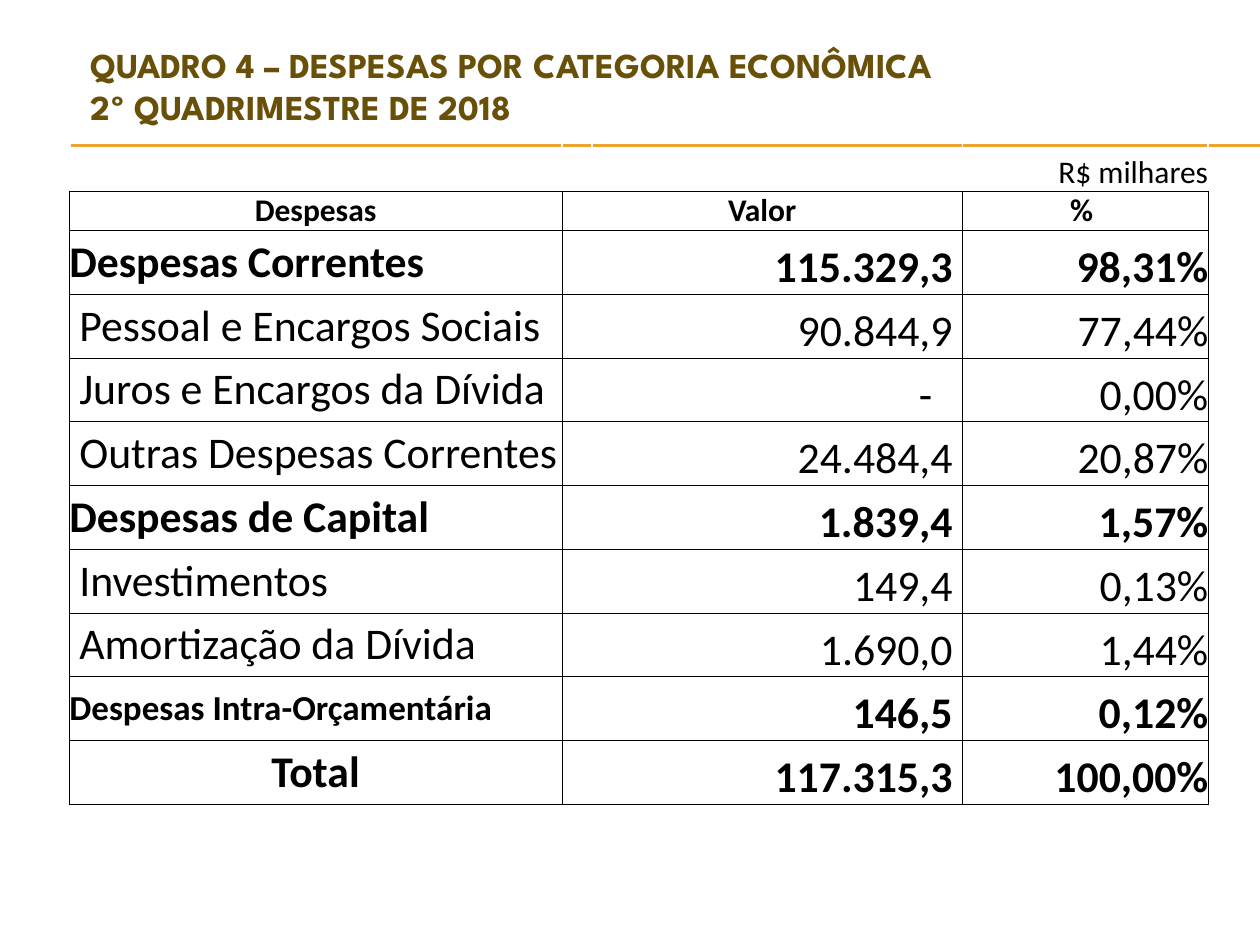
from dataclasses import dataclass

import pptx
import pptx.dml.color
import pptx.enum.shapes
import pptx.enum.text
import pptx.oxml
import pptx.oxml.ns
import pptx.util

Inches = pptx.util.Inches
Pt = pptx.util.Pt
Align = pptx.enum.text.PP_ALIGN
Anchor = pptx.enum.text.MSO_ANCHOR


@dataclass(frozen=True)
class Theme:
    title: str = "695008"
    rule: str = "F0A22E"
    ink: str = "000000"
    head: str = "League Spartan"
    body: str = "Calibri"
    small: int = 18
    mid: int = 20
    large: int = 25


THEME = Theme()


@dataclass(frozen=True)
class Entry:
    name: str
    value: str
    share: str
    bold: bool = False
    size: int = THEME.large
    align: Align = Align.LEFT
    pad: float = 0.08  # space right of the value


@dataclass(frozen=True)
class Style:
    size: int
    bold: bool
    align: Align
    anchor: Anchor = Anchor.MIDDLE
    left: float = 0
    right: float = 0


ENTRIES = [
    Entry("Despesas Correntes", "115.329,3", "98,31%", True),
    Entry("Pessoal e Encargos Sociais", "90.844,9", "77,44%"),
    Entry("Juros e Encargos da Dívida", "-", "0,00%", pad=0.24),
    Entry("Outras Despesas Correntes", "24.484,4", "20,87%"),
    Entry("Despesas de Capital", "1.839,4", "1,57%", True),
    Entry("Investimentos", "149,4", "0,13%"),
    Entry("Amortização da Dívida", "1.690,0", "1,44%"),
    Entry("Despesas Intra-Orçamentária", "146,5", "0,12%", True, THEME.mid),
    Entry("Total", "117.315,3", "100,00%", True, align=Align.CENTER),
]
COLS = [3.91, 0.03, 2.94, 1.95]
ROWS = [0.5, 0.31] + [0.506] * len(ENTRIES)


def paint(font, face: str, size: int, color: str, bold: bool) -> None:
    font.name, font.size, font.bold = face, Pt(size), bold
    font.color.rgb = pptx.dml.color.RGBColor.from_string(color)


def rule(slide, top: float) -> None:
    line = slide.shapes.add_connector(
        pptx.enum.shapes.MSO_CONNECTOR.STRAIGHT,
        Inches(0.56), Inches(top), Inches(10), Inches(top))
    line.line.color.rgb = pptx.dml.color.RGBColor.from_string(THEME.rule)
    line.line.width = Pt(0.75)
    props = line._element.spPr
    props.append(props.makeelement(pptx.oxml.ns.qn("a:effectLst"), {}))


def title(slide, lines: list[str]) -> None:
    box = slide.shapes.add_textbox(
        Inches(0.62), Inches(0.39), Inches(8.5), Inches(0.58))
    frame = box.text_frame
    frame.word_wrap = True
    frame.vertical_anchor = Anchor.MIDDLE
    para = frame.paragraphs[0]
    for i, line in enumerate(lines):
        if i:
            para.add_line_break()
        run = para.add_run()
        run.text = line
        paint(run.font, THEME.head, THEME.mid, THEME.title, True)


def border(cell, sides: str) -> None:
    props = cell._tc.get_or_add_tcPr()
    for i, side in enumerate(sides):
        props.insert(i, pptx.oxml.parse_xml(
            f'<a:ln{side} {pptx.oxml.ns.nsdecls("a")} w="{Pt(0.5)}">'
            f'<a:solidFill><a:srgbClr val="{THEME.ink}"/></a:solidFill>'
            f'</a:ln{side}>'))


def write(cell, text: str, style: Style) -> None:
    cell.margin_left, cell.margin_right = Inches(style.left), Inches(style.right)
    cell.margin_top = cell.margin_bottom = 0
    cell.vertical_anchor = style.anchor
    para = cell.text_frame.paragraphs[0]
    para.alignment = style.align
    run = para.add_run()
    run.text = text
    paint(run.font, THEME.body, style.size, THEME.ink, style.bold)


def grid(slide) -> None:
    table = slide.shapes.add_table(
        len(ROWS), len(COLS), Inches(0.55), Inches(1.02),
        Inches(sum(COLS)), Inches(sum(ROWS))).table
    table.first_row = table.horz_banding = False
    for col, width in zip(table.columns, COLS):
        col.width = Inches(width)
    for i, (row, height) in enumerate(zip(table.rows, ROWS)):
        row.height = Inches(height)
        for cell in row.cells:
            cell.fill.background()
            border(cell, "LRTB" if i else "B")
        if i:
            table.cell(i, 1).merge(table.cell(i, 2))

    # Unit and column heads
    write(table.cell(0, 3), "R$ milhares",
          Style(THEME.small, False, Align.RIGHT, Anchor.BOTTOM))
    for col, text, pad in ((0, "Despesas", 0), (1, "Valor", 0), (3, "%", 0.06)):
        write(table.cell(1, col), text,
              Style(THEME.small, True, Align.CENTER, right=pad))

    # Expense rows
    for i, entry in enumerate(ENTRIES, 2):
        write(table.cell(i, 0), entry.name,
              Style(entry.size, entry.bold, entry.align,
                    left=0 if entry.bold else 0.08))
        for col, text, pad in ((1, entry.value, entry.pad), (3, entry.share, 0)):
            write(table.cell(i, col), text,
                  Style(THEME.large, entry.bold, Align.RIGHT,
                        Anchor.BOTTOM, right=pad))


def main() -> None:
    deck = pptx.Presentation()
    deck.slide_width, deck.slide_height = Inches(10), Inches(7.5)
    slide = deck.slides.add_slide(deck.slide_layouts[6])
    for top in (1.15, 1.16):
        rule(slide, top)
    title(slide, ["QUADRO 4 – DESPESAS POR CATEGORIA ECONÔMICA",
                  "2º QUADRIMESTRE DE 2018"])
    grid(slide)
    deck.save("out.pptx")


if __name__ == "__main__":
    main()
